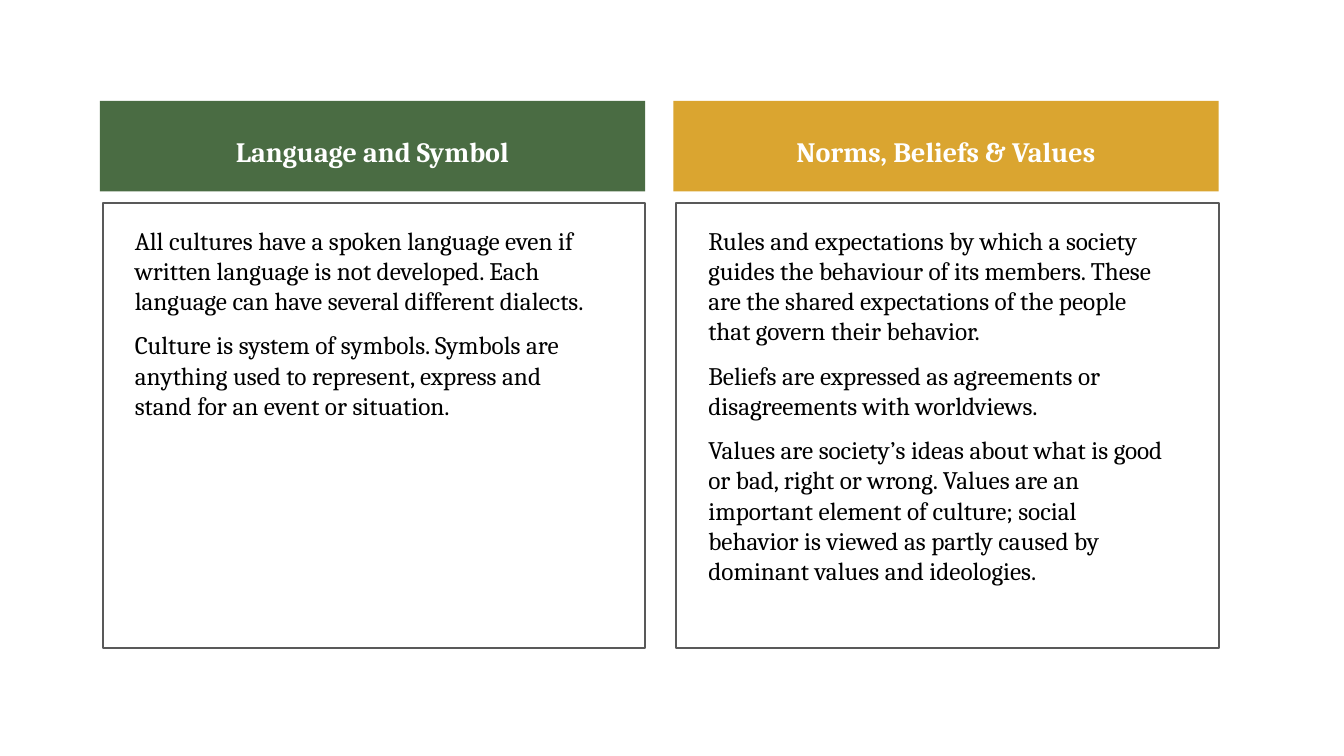
from pptx import Presentation
from pptx.dml.color import RGBColor
from pptx.enum.shapes import MSO_SHAPE
from pptx.enum.text import MSO_ANCHOR, PP_ALIGN
from pptx.util import Pt

RECTANGLE = MSO_SHAPE.RECTANGLE
TOP, MIDDLE = MSO_ANCHOR.TOP, MSO_ANCHOR.MIDDLE
LEFT, CENTER = PP_ALIGN.LEFT, PP_ALIGN.CENTER

TOPICS = [
    ("Language and Symbol", "4A6C43", [
        "All cultures have a spoken language even if written language is not "
        "developed. Each language can have several different dialects.",
        "Culture is system of symbols. Symbols are anything used to represent, "
        "express and stand for an event or situation.",
    ]),
    ("Norms, Beliefs & Values", "DAA530", [
        "Rules and expectations by which a society guides the behaviour of its "
        "members. These are the shared expectations of the people that govern "
        "their behavior.",
        "Beliefs are expressed as agreements or disagreements with worldviews.",
        "Values are society’s ideas about what is good or bad, right or wrong. "
        "Values are an important element of culture; social behavior is viewed "
        "as partly caused by dominant values and ideologies.",
    ]),
]


def color(hex_string):
    return RGBColor.from_string(hex_string)


def add_block(slide, left, top, width, height, margins):
    block = slide.shapes.add_shape(RECTANGLE, Pt(left), Pt(top), Pt(width), Pt(height))
    block.shadow.inherit = False
    frame = block.text_frame
    frame.word_wrap = True
    (frame.margin_left, frame.margin_top,
     frame.margin_right, frame.margin_bottom) = map(Pt, margins)
    return block


def write(frame, paragraphs, size, hex_string, align, bold=False):
    for index, text in enumerate(paragraphs):
        paragraph = frame.paragraphs[0] if index == 0 else frame.add_paragraph()
        paragraph.text = text
        paragraph.alignment = align
        paragraph.space_before = Pt(10 if index else 0)
        paragraph.font.name = "Cambria"
        paragraph.font.size = Pt(size)
        paragraph.font.bold = bold
        paragraph.font.color.rgb = color(hex_string)


def add_heading(slide, title, fill, left, top, width, height):
    heading = add_block(slide, left, top, width, height, (7.2, 7.2, 7.2, 0))
    heading.fill.solid()
    heading.fill.fore_color.rgb = color(fill)
    heading.line.fill.background()
    heading.text_frame.vertical_anchor = MIDDLE
    write(heading.text_frame, [title], 20, "FFFFFF", CENTER, bold=True)


def add_description(slide, paragraphs, left, top, width, height):
    description = add_block(slide, left, top, width, height, (23, 16, 34, 7.2))
    description.fill.background()
    description.line.color.rgb = color("595959")
    description.line.width = Pt(1.5)
    description.text_frame.vertical_anchor = TOP
    write(description.text_frame, paragraphs, 18, "000000", LEFT)


def add_topic(slide, topic, left, top, width, height):
    title, fill, paragraphs = topic
    heading_height, gap, indent = 64.8, 7.9, 2
    add_heading(slide, title, fill, left, top, width, heading_height)
    offset = heading_height + gap
    add_description(slide, paragraphs, left + indent, top + offset,
                    width - indent, height - offset)


def main():
    presentation = Presentation()
    presentation.slide_width = Pt(960)
    presentation.slide_height = Pt(540)
    slide = presentation.slides.add_slide(presentation.slide_layouts[6])
    left, top, width, height, gutter = 71.3, 72, 389.5, 391, 20.2
    for column, topic in enumerate(TOPICS):
        add_topic(slide, topic, left + column * (width + gutter), top, width, height)
    presentation.save("out.pptx")


if __name__ == "__main__":
    main()
